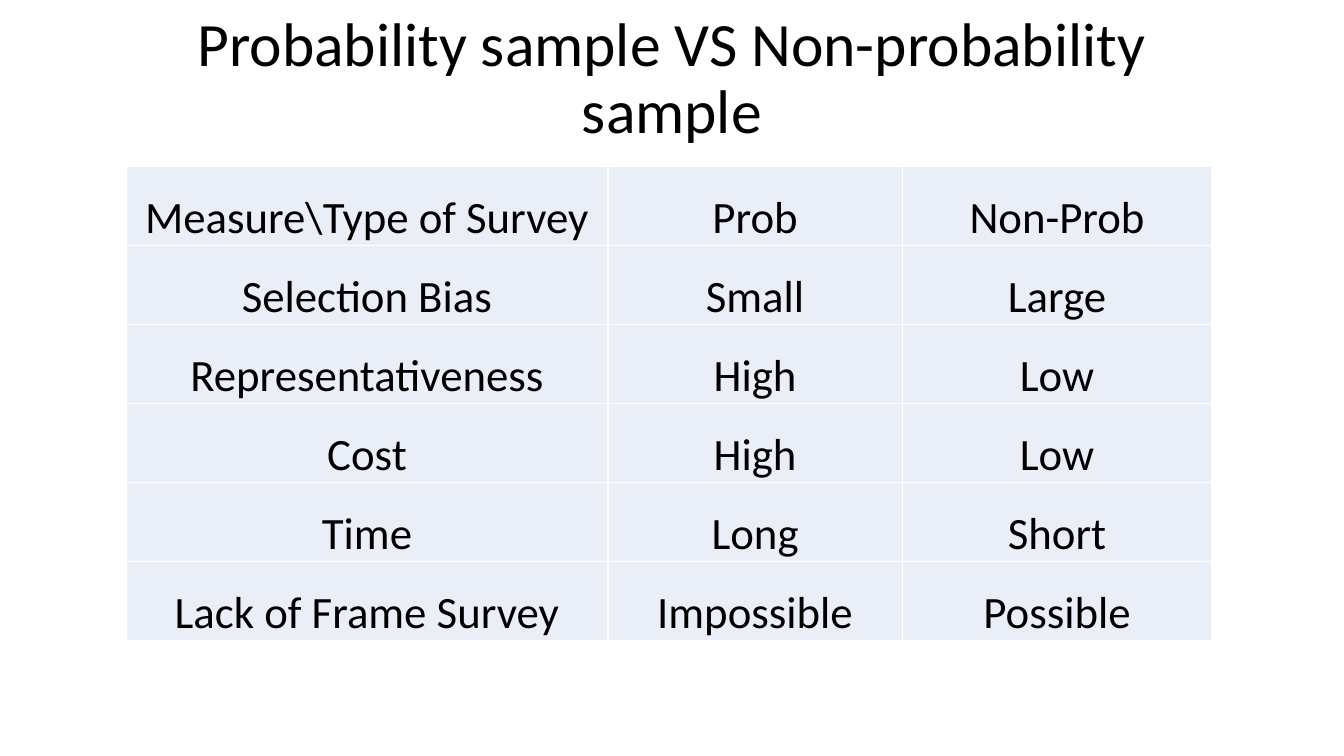
"""Build a slide comparing probability and non-probability samples."""
from lxml.etree import SubElement
from pptx import Presentation
from pptx.dml.color import RGBColor
from pptx.enum.text import MSO_ANCHOR, PP_ALIGN
from pptx.oxml.ns import qn
from pptx.util import Cm, Pt

TITLE = "Probability sample VS Non-probability sample"
ROWS = [
    ("Measure\\Type of Survey", "Prob", "Non-Prob"),
    ("Selection Bias", "Small", "Large"),
    ("Representativeness", "High", "Low"),
    ("Cost", "High", "Low"),
    ("Time", "Long", "Short"),
    ("Lack of Frame Survey", "Impossible", "Possible"),
]
THEME = {
    "font": "Calibri",
    "text": "000000",
    "cell": "EAEFF7",
    "border": "FFFFFF",
    "title_size": 44,
    "cell_size": 32,
    "border_width": 1,
}
PAGE_SIZE = (33.87, 19.05)
TITLE_BOX = (2.33, 1.02, 29.21, 3.68)
TABLE_CORNER = (3.18, 4.19)
COLUMN_WIDTHS = (12.14, 7.42, 7.8)
ROW_HEIGHT = 1.99


def apply_format(target, values):
    for name, value in values.items():
        setattr(target, name, value)


def write(frame, text, size, spacing=1.0):
    para = frame.paragraphs[0]
    apply_format(para, {"alignment": PP_ALIGN.CENTER, "line_spacing": spacing})
    span = para.add_run()
    span.text = text
    apply_format(span.font, {"name": THEME["font"], "size": Pt(size)})
    span.font.color.rgb = RGBColor.from_string(THEME["text"])


def add_borders(cell):
    properties = cell._tc.get_or_add_tcPr()
    for side in ("a:lnL", "a:lnR", "a:lnT", "a:lnB"):
        line = SubElement(properties, qn(side), w=str(Pt(THEME["border_width"])))
        fill = SubElement(line, qn("a:solidFill"))
        SubElement(fill, qn("a:srgbClr"), val=THEME["border"])


def add_title(page):
    frame = page.shapes.add_textbox(*map(Cm, TITLE_BOX)).text_frame
    apply_format(frame, {
        "word_wrap": True,
        "vertical_anchor": MSO_ANCHOR.MIDDLE,
        "margin_bottom": Cm(1.8),
    })
    write(frame, TITLE, THEME["title_size"], 0.9)


def add_comparison(page):
    size = (sum(COLUMN_WIDTHS), ROW_HEIGHT * len(ROWS))
    table = page.shapes.add_table(
        len(ROWS), len(COLUMN_WIDTHS), *map(Cm, TABLE_CORNER + size)
    ).table
    apply_format(table, {"first_row": False, "horz_banding": False})
    for column, width in zip(table.columns, COLUMN_WIDTHS):
        column.width = Cm(width)
    for row, texts in zip(table.rows, ROWS):
        row.height = Cm(ROW_HEIGHT)
        for cell, text in zip(row.cells, texts):
            apply_format(cell, {
                "vertical_anchor": MSO_ANCHOR.BOTTOM,
                "margin_left": 0,
                "margin_right": 0,
                "margin_top": 0,
                "margin_bottom": 0,
            })
            add_borders(cell)
            cell.fill.solid()
            cell.fill.fore_color.rgb = RGBColor.from_string(THEME["cell"])
            write(cell.text_frame, text, THEME["cell_size"])


def main():
    deck = Presentation()
    deck.slide_width, deck.slide_height = map(Cm, PAGE_SIZE)
    page = deck.slides.add_slide(deck.slide_layouts[6])
    add_title(page)
    add_comparison(page)
    deck.save("out.pptx")


if __name__ == "__main__":
    main()
